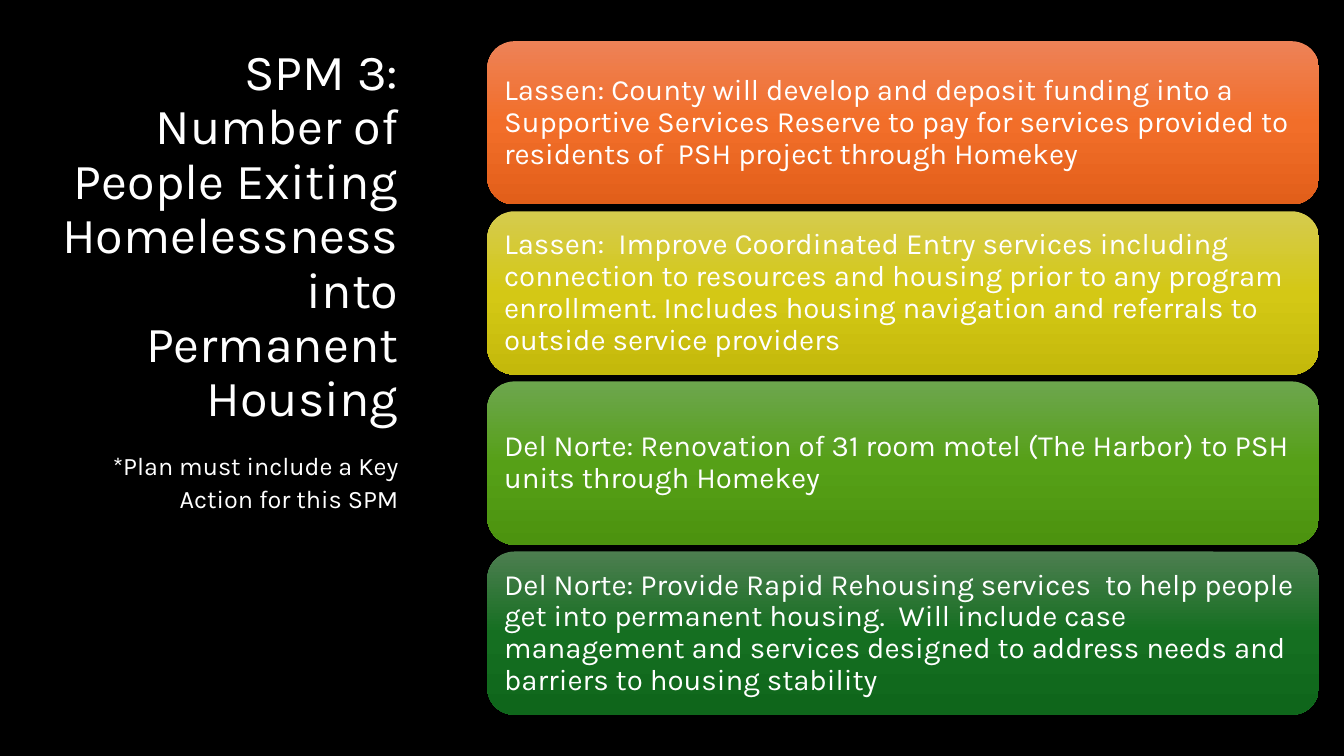
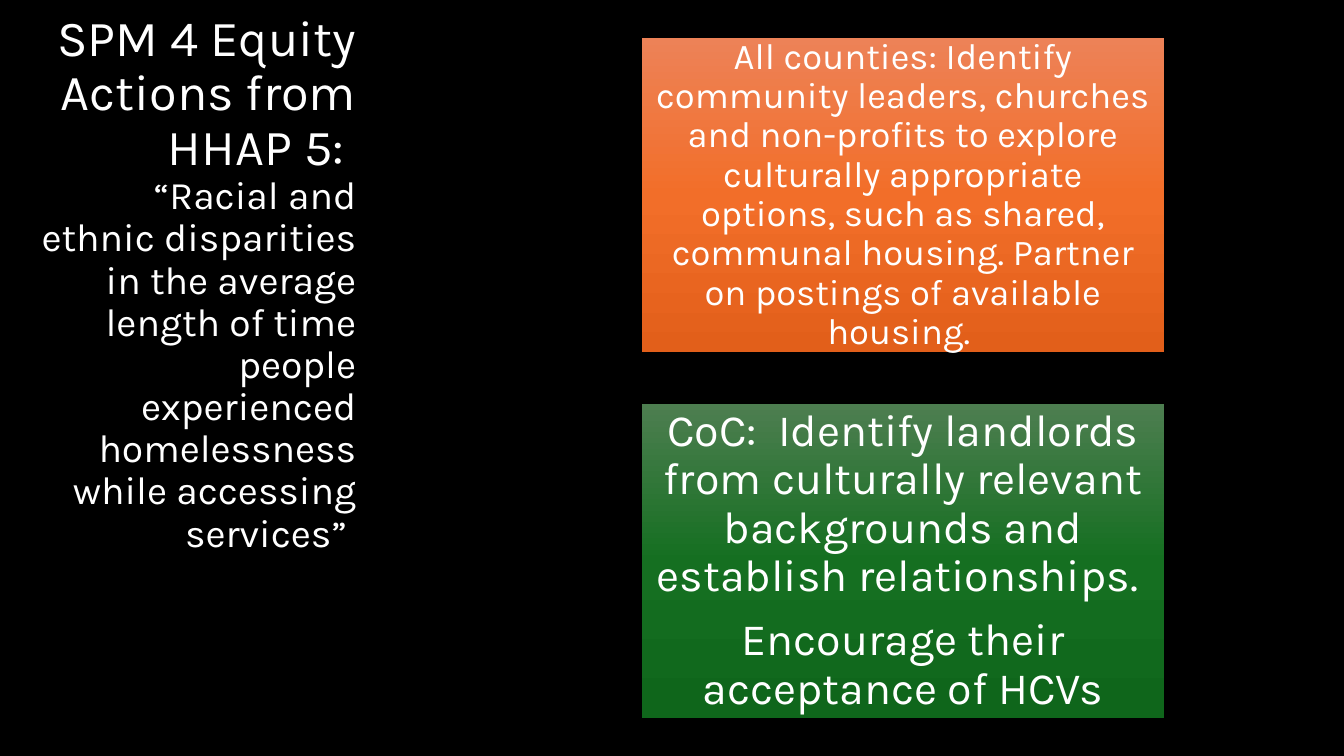
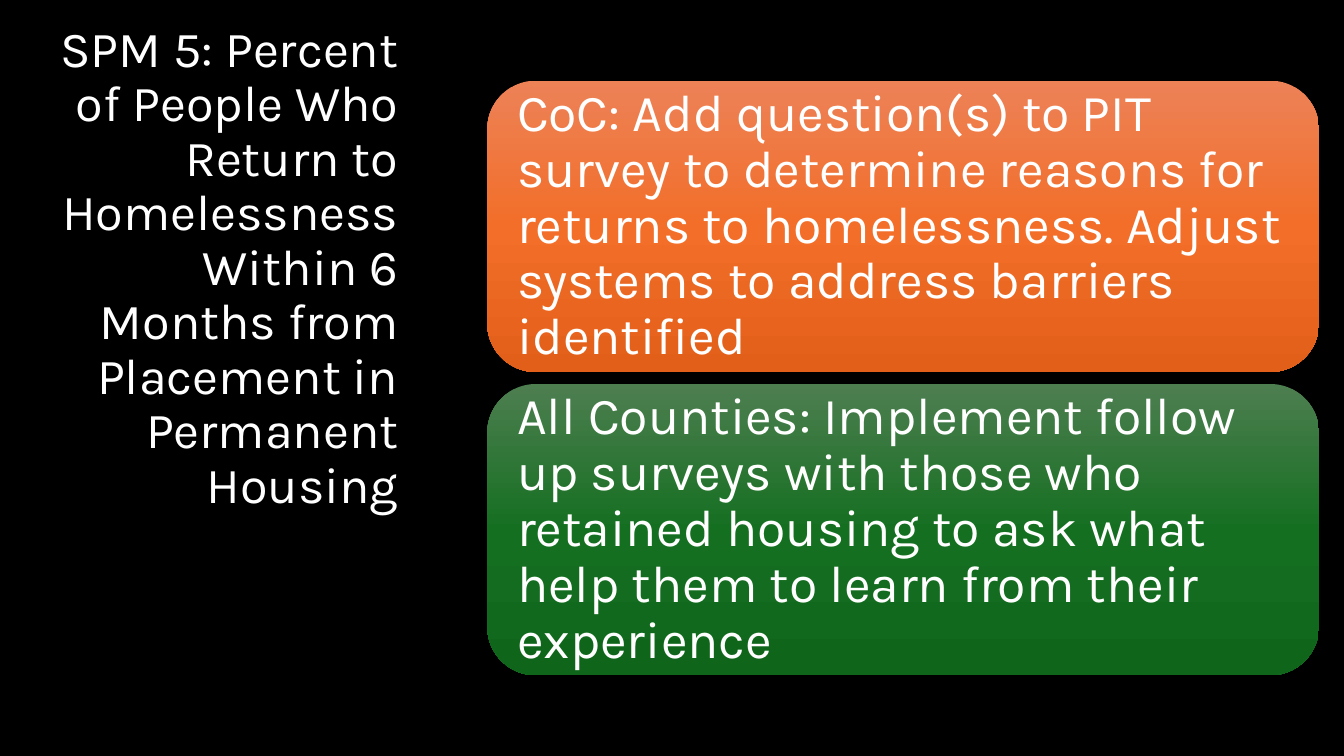
from copy import deepcopy
from dataclasses import dataclass

from pptx import Presentation
from pptx.dml.color import RGBColor as Rgb
from pptx.enum.shapes import MSO_SHAPE as Kind
from pptx.enum.text import MSO_ANCHOR as Anchor, PP_ALIGN as Align
from pptx.oxml.ns import qn
from pptx.util import Inches, Pt

# Shared look
WIDE, HIGH = Inches(13.333), Inches(7.5)
FONT = "Karla"
LEAD = 0.9
MID = 67.2  # centre of the cards, percent of slide width
INK = {"back": "000000", "text": "FFFFFF"}
FADE = {
    "orange": ("ED8257", "F26E29", "E25F1A"),
    "yellow": ("D5CB4E", "D4C815", "C4B90B"),
    "lime": ("6DA64E", "56A017", "4C930F"),
    "green": ("4D7E50", "156F21", "0F661B"),
}


@dataclass(frozen=True)
class Span:
    """A run of title text."""
    text: str
    size: float = 36


@dataclass(frozen=True)
class Title:
    """Title spans and an optional note; box in percent of the slide."""
    spans: tuple[Span, ...]
    note: str = ""
    box: tuple[float, float, float, float] = (2.93, 16.13, 27.46, 52.53)
    foot: float = 0.67  # space under the text


@dataclass(frozen=True)
class Card:
    fade: str
    lines: tuple[str, ...]
    size: float


@dataclass(frozen=True)
class Stack:
    """Equal cards, centred on the slide's height; percent of the slide."""
    cards: tuple[Card, ...]
    wide: float
    high: float
    gap: float
    kind: Kind = Kind.ROUNDED_RECTANGLE
    align: Align = Align.LEFT


def across(share: float) -> int:
    return round(WIDE * share / 100)


def down(share: float) -> int:
    return round(HIGH * share / 100)


def style(para, size: float, align: Align, lead: float = LEAD) -> None:
    para.alignment, para.line_spacing = align, lead
    para.font.name, para.font.size = FONT, Pt(size)
    para.font.color.rgb = Rgb.from_string(INK["text"])


def shade(shape, name: str) -> None:
    """Fill from top to bottom with three even stops."""
    fill = shape.fill
    fill.gradient()
    fill.gradient_angle = 270
    stops = shape.element.spPr.find(".//" + qn("a:gsLst"))
    stops.append(deepcopy(stops[-1]))
    for num, (stop, tint) in enumerate(zip(fill.gradient_stops, FADE[name])):
        stop.color.rgb = Rgb.from_string(tint)
        stop.position = num / 2


def add_title(slide, title: Title) -> None:
    left, top, wide, high = title.box
    frame = slide.shapes.add_textbox(
        across(left), down(top), across(wide), down(high)).text_frame
    frame.word_wrap, frame.vertical_anchor = True, Anchor.BOTTOM
    frame.margin_bottom = down(title.foot)
    head = frame.paragraphs[0]
    style(head, title.spans[0].size, Align.RIGHT)
    for span in title.spans:
        run = head.add_run()
        run.text, run.font.size = span.text, Pt(span.size)
    if title.note:
        note = frame.add_paragraph()
        note.text, note.space_before = title.note, Pt(14)
        style(note, 18, Align.RIGHT, 1.1)


def add_card(slide, card: Card, stack: Stack, top: float) -> None:
    shape = slide.shapes.add_shape(
        stack.kind, across(MID - stack.wide / 2), down(top),
        across(stack.wide), down(stack.high))
    shape.shadow.inherit = False
    shape.line.fill.background()
    shade(shape, card.fade)
    frame = shape.text_frame
    frame.word_wrap, frame.vertical_anchor = True, Anchor.MIDDLE
    pad = Pt(card.size * 0.3)
    frame.margin_left = frame.margin_right = pad
    frame.margin_top = frame.margin_bottom = pad
    for num, line in enumerate(card.lines):
        para = frame.add_paragraph() if num else frame.paragraphs[0]
        para.text = line
        style(para, card.size, stack.align)
        if num:
            para.space_before = Pt(card.size * 0.35)


def add_stack(slide, stack: Stack) -> None:
    step = stack.high + stack.gap
    first = (100 - len(stack.cards) * step + stack.gap) / 2
    for num, card in enumerate(stack.cards):
        add_card(slide, card, stack, first + num * step)


# Content
PAGES = (
    (
        Title((Span("SPM 3: Number of People Exiting Homelessness into "
                    "Permanent Housing"),),
              note="*Plan must include a Key Action for this SPM"),
        Stack((
            Card("orange", (
                "Lassen: County will develop and deposit funding into a "
                "Supportive Services Reserve to pay for services provided to "
                "residents of  PSH project through Homekey",), 21),
            Card("yellow", (
                "Lassen:  Improve Coordinated Entry services including "
                "connection to resources and housing prior to any program "
                "enrollment. Includes housing navigation and referrals to "
                "outside service providers",), 21),
            Card("lime", (
                "Del Norte: Renovation of 31 room motel (The Harbor) to PSH "
                "units through Homekey",), 21),
            Card("green", (
                "Del Norte: Provide Rapid Rehousing services  to help people "
                "get into permanent housing.  Will include case management "
                "and services designed to address needs and barriers to "
                "housing stability",), 21),
        ), wide=61.88, high=21.6, gap=0.9),
    ),
    (
        Title((Span("SPM 4 Equity Actions from HHAP 5:  "),
               Span("“Racial and ethnic disparities in the average length of "
                    "time people experienced homelessness while accessing "
                    "services” ", 27.9)),
              box=(1.88, 32.8, 25.36, 52.8), foot=12.1),
        Stack((
            Card("orange", (
                "All counties: Identify community leaders, churches and "
                "non-profits to explore culturally appropriate options, such "
                "as shared, communal housing. Partner on postings of "
                "available housing. ",), 26),
            Card("green", (
                "CoC:  Identify landlords from culturally relevant "
                "backgrounds and establish relationships.  ",
                "Encourage their acceptance of HCVs"), 32),
        ), wide=38.86, high=41.47, gap=6.93,
            kind=Kind.RECTANGLE, align=Align.CENTER),
    ),
    (
        Title((Span("SPM 5: Percent of People Who Return to Homelessness "
                    "Within 6 Months from Placement in Permanent Housing"),)),
        Stack((
            Card("orange", (
                "CoC: Add question(s) to PIT survey to determine reasons for "
                "returns to homelessness. Adjust systems to address barriers "
                "identified",), 37),
            Card("green", (
                "All Counties: Implement follow up surveys with those who "
                "retained housing to ask what help them to learn from their "
                "experience",), 37),
        ), wide=61.88, high=38.53, gap=1.6),
    ),
)


def main() -> None:
    deck = Presentation()
    deck.slide_width, deck.slide_height = WIDE, HIGH
    for title, stack in PAGES:
        slide = deck.slides.add_slide(deck.slide_layouts[6])
        back = slide.background.fill
        back.solid()
        back.fore_color.rgb = Rgb.from_string(INK["back"])
        add_title(slide, title)
        add_stack(slide, stack)
    deck.save("out.pptx")


if __name__ == "__main__":
    main()
